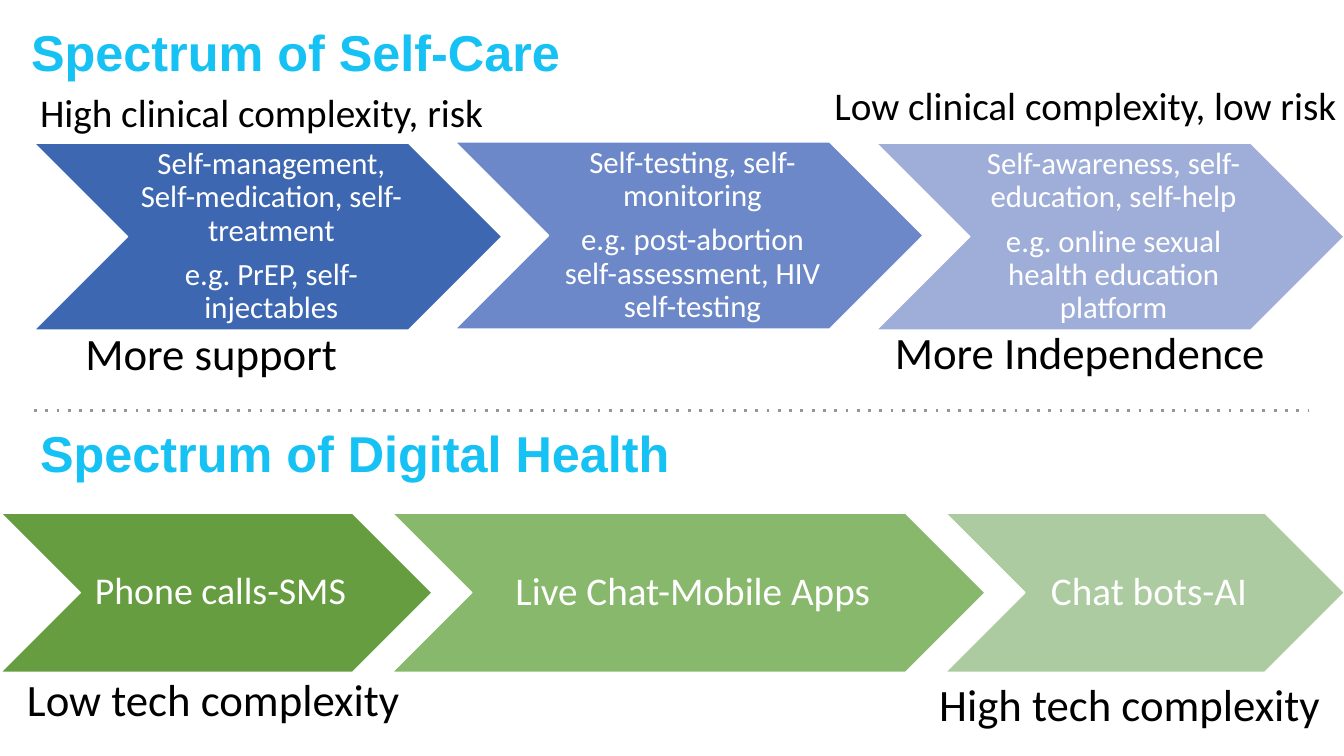
import pptx
import pptx.util
import pptx.dml.color
import pptx.enum.dml
import pptx.enum.shapes
import pptx.enum.text
from lxml import etree

Cm, Pt = pptx.util.Cm, pptx.util.Pt
ANCHOR = pptx.enum.text.MSO_ANCHOR
ALIGN = pptx.enum.text.PP_ALIGN
AUTO_SIZE = pptx.enum.text.MSO_AUTO_SIZE

CYAN, WHITE, BLACK, GREY = "16C1F3", "FFFFFF", "000000", "939598"

# text, (left, top, width, height) in cm
CARE_TITLE = ("Spectrum of Self-Care", (0.53, -0.46, 30.68, 3.68))
DIGITAL_TITLE = ("Spectrum of Digital Health", (0.76, 10.01, 30.68, 2.97))

# text, size, (left, top, width, height) in cm
LABELS = [
    ("More support", 32, (1.9, 8.08, 8.0, 1.62)),
    ("More Independence", 32, (22.3, 8.05, 10.13, 1.62)),
    ("Low tech complexity", 32, (0.43, 16.79, 11.0, 1.62)),
    ("High tech complexity", 32, (23.42, 16.92, 11.0, 1.62)),
    ("High clinical complexity, risk", 28, (0.76, 2.11, 15.04, 1.45)),
    ("Low clinical complexity, low risk", 28, (20.78, 1.93, 15.04, 1.45)),
]

# paragraphs, size, fill, width, top
CARE_STEPS = [
    (["Self-management, Self-medication, self-treatment",
      "e.g. PrEP, self-injectables"], 22, "3E67B2", 11.79, 3.61),
    (["Self-testing, self-monitoring",
      "e.g. post-abortion self-assessment, HIV self-testing"], 22, "6C88C8", 11.79, 3.58),
    (["Self-awareness, self-education, self-help",
      "e.g. online sexual health education platform"], 22, "9FAED8", 11.79, 3.61),
]
DIGITAL_STEPS = [
    (["Phone calls-SMS"], 27, "669D40", 10.87, 12.93),
    (["Live Chat-Mobile Apps"], 28, "87B86B", 14.94, 12.93),
    (["Chat bots-AI"], 28, "ADCBA0", 10.06, 12.93),
]

# steps, left of the first chevron, height, left inset, other insets
CHAINS = [
    (CARE_STEPS, 0.86, 4.71, 0.25, 0.08),
    (DIGITAL_STEPS, 0.02, 4.01, 0.3, 0.1),
]
OVERLAP = 0.25  # share of the chevron height


def rgb(value):
    return pptx.dml.color.RGBColor.from_string(value)


def write(frame, paragraphs, size, color, font="Calibri", bold=False,
          align=ALIGN.LEFT, anchor=ANCHOR.TOP, spacing=None, after=0,
          auto_size=AUTO_SIZE.NONE):
    frame.word_wrap = True
    frame.auto_size = auto_size
    frame.vertical_anchor = anchor
    for index, text in enumerate(paragraphs):
        para = frame.paragraphs[0] if index == 0 else frame.add_paragraph()
        para.alignment = align
        para.space_before = Pt(0)
        para.space_after = Pt(after)
        if spacing:
            para.line_spacing = spacing
        span = para.add_run()
        span.text = text
        span.font.name = font
        span.font.size = Pt(size)
        span.font.bold = bold
        span.font.color.rgb = rgb(color)


def write_heading(shape, text):
    write(shape.text_frame, [text], 36, CYAN, font="Arial", bold=True,
          anchor=ANCHOR.MIDDLE, spacing=0.9)


def add_chain(page, steps, left, height, inset, edge):
    """Draw a row of chevrons, each one starting inside the point of the last."""
    for paragraphs, size, fill, width, top in steps:
        chevron = page.shapes.add_shape(
            pptx.enum.shapes.MSO_SHAPE.CHEVRON,
            Cm(left), Cm(top), Cm(width), Cm(height))
        chevron.shadow.inherit = False
        chevron.fill.solid()
        chevron.fill.fore_color.rgb = rgb(fill)
        chevron.line.color.rgb = rgb(WHITE)
        chevron.line.width = Pt(1)
        frame = chevron.text_frame
        frame.margin_left = Cm(inset)
        frame.margin_top = frame.margin_right = frame.margin_bottom = Cm(edge)
        write(frame, paragraphs, size, WHITE, align=ALIGN.CENTER,
              anchor=ANCHOR.MIDDLE, spacing=0.9, after=round(size * 0.35, 1))
        left += width - height * OVERLAP


def add_divider(page):
    divider = page.shapes.add_connector(
        pptx.enum.shapes.MSO_CONNECTOR.STRAIGHT,
        Cm(0.86), Cm(10.34), Cm(33), Cm(10.34))
    divider.line.color.rgb = rgb(GREY)
    divider.line.width = Pt(2)
    divider.line.dash_style = pptx.enum.dml.MSO_LINE.ROUND_DOT
    properties = divider.element.spPr
    properties.find(".//" + pptx.oxml.ns.qn("a:prstDash")).set("val", "dot")
    etree.SubElement(properties, pptx.oxml.ns.qn("a:effectLst"))


def main():
    deck = pptx.Presentation()
    deck.slide_width, deck.slide_height = Cm(33.87), Cm(19.05)
    page = deck.slides.add_slide(deck.slide_layouts[5])

    text, area = CARE_TITLE
    title = page.shapes.title
    title.left, title.top, title.width, title.height = map(Cm, area)
    write_heading(title, text)

    add_divider(page)
    for chain in CHAINS:
        add_chain(page, *chain)

    text, area = DIGITAL_TITLE
    write_heading(page.shapes.add_textbox(*map(Cm, area)), text)
    for text, size, area in LABELS:
        label = page.shapes.add_textbox(*map(Cm, area))
        write(label.text_frame, [text], size, BLACK,
              auto_size=AUTO_SIZE.SHAPE_TO_FIT_TEXT)

    deck.save("out.pptx")


if __name__ == "__main__":
    main()
